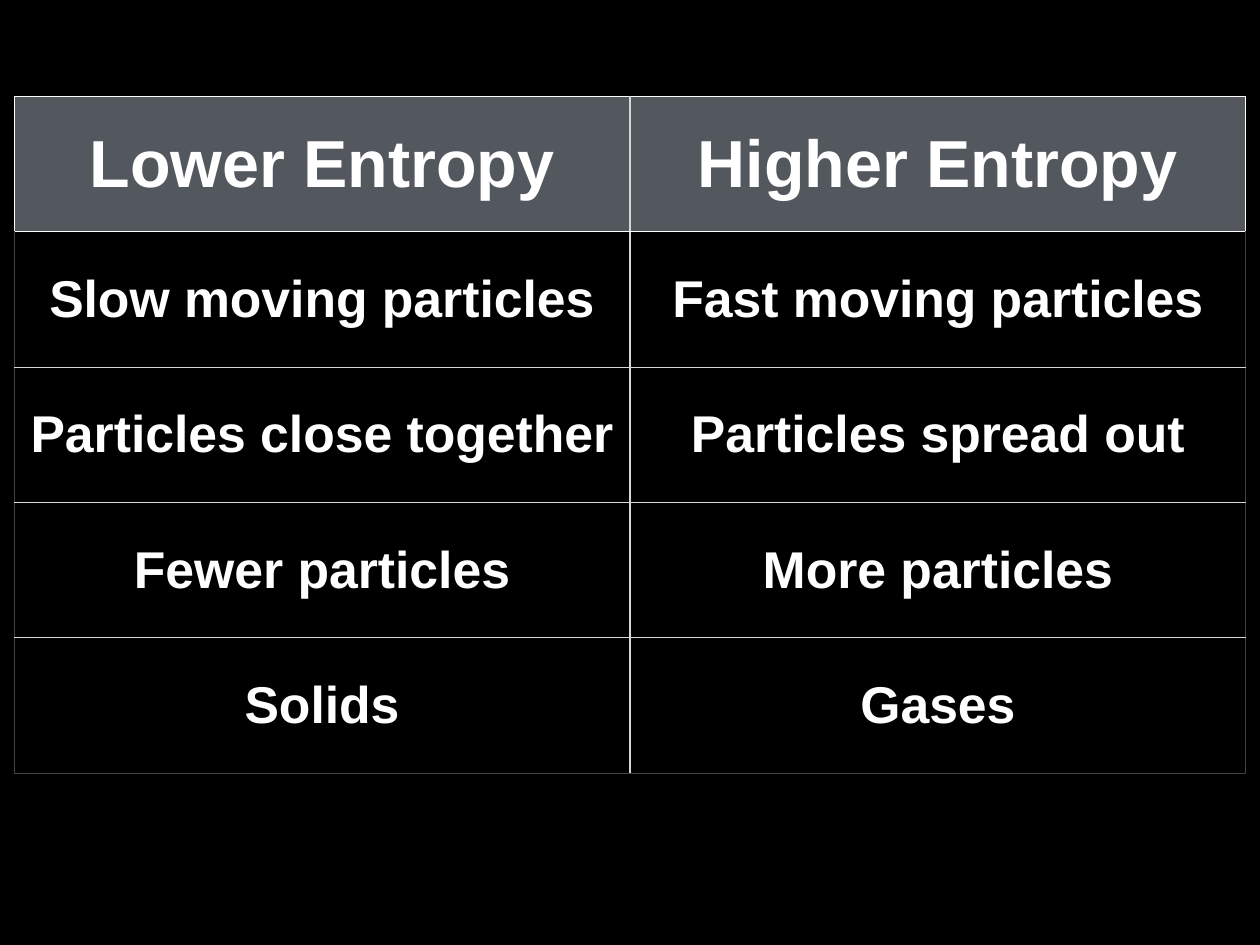
from dataclasses import dataclass

from lxml import etree
from pptx import Presentation
from pptx import table as tables
from pptx import util as u
from pptx.dml.color import RGBColor
from pptx.enum import text
from pptx.oxml import ns

WHITE, PALE, DARK, SLATE, BLACK = "FFFFFF", "D6D7D6", "424242", "53585F", "000000"
COLUMN_WIDTH, ROW_HEIGHT = 500.5, 110
TABLE_LEFT, TABLE_TOP = 11.5, 78.5


@dataclass(frozen=True)
class Comparison:
    lower: str
    higher: str


COMPARISONS = [
    Comparison("Lower Entropy", "Higher Entropy"),
    Comparison("Slow moving particles", "Fast moving particles"),
    Comparison("Particles close together", "Particles spread out"),
    Comparison("Fewer particles", "More particles"),
    Comparison("Solids", "Gases"),
]


def paint(fill, color: str) -> None:
    fill.solid()
    fill.fore_color.rgb = RGBColor.from_string(color)


def write(cell: tables._Cell, words: str, *, size: float, color: str = WHITE) -> None:
    cell.vertical_anchor = text.MSO_ANCHOR.MIDDLE
    cell.margin_left = cell.margin_right = u.Pt(4)
    cell.margin_top = cell.margin_bottom = u.Pt(4)
    para = cell.text_frame.paragraphs[0]
    para.alignment = text.PP_ALIGN.CENTER
    span = para.add_run()
    span.text = words
    span.font.name = "Arial"
    span.font.size = u.Pt(size)
    span.font.bold = True
    paint(span.font.fill, color)


def draw_borders(cell: tables._Cell, left: str, right: str, top: str, bottom: str) -> None:
    properties = cell._tc.get_or_add_tcPr()
    sides = {"lnL": left, "lnR": right, "lnT": top, "lnB": bottom}
    for position, (side, color) in enumerate(sides.items()):
        line = etree.Element(ns.qn(f"a:{side}"), w=str(u.Pt(1)))
        solid = etree.SubElement(line, ns.qn("a:solidFill"))
        etree.SubElement(solid, ns.qn("a:srgbClr"), val=color)
        properties.insert(position, line)


def add_entropy_table(page) -> None:
    row_count = len(COMPARISONS)
    frame = page.shapes.add_table(
        row_count, 2, u.Pt(TABLE_LEFT), u.Pt(TABLE_TOP),
        u.Pt(2 * COLUMN_WIDTH), u.Pt(row_count * ROW_HEIGHT))
    grid = frame.table
    grid.horz_banding = False
    for row, comparison in enumerate(COMPARISONS):
        header = row == 0
        outer = WHITE if header else DARK
        top = WHITE if row <= 1 else PALE
        bottom = WHITE if header else DARK if row == row_count - 1 else PALE
        for column, words in enumerate((comparison.lower, comparison.higher)):
            cell = grid.cell(row, column)
            write(cell, words, size=54 if header else 42)
            if header:
                paint(cell.fill, SLATE)
            else:
                cell.fill.background()
            left, right = (outer, PALE) if column == 0 else (PALE, outer)
            draw_borders(cell, left, right, top, bottom)


def main() -> None:
    deck = Presentation()
    deck.slide_width, deck.slide_height = u.Pt(1024), u.Pt(768)
    page = deck.slides.add_slide(deck.slide_layouts.get_by_name("Blank"))
    paint(page.background.fill, BLACK)
    add_entropy_table(page)
    deck.save("out.pptx")


if __name__ == "__main__":
    main()
